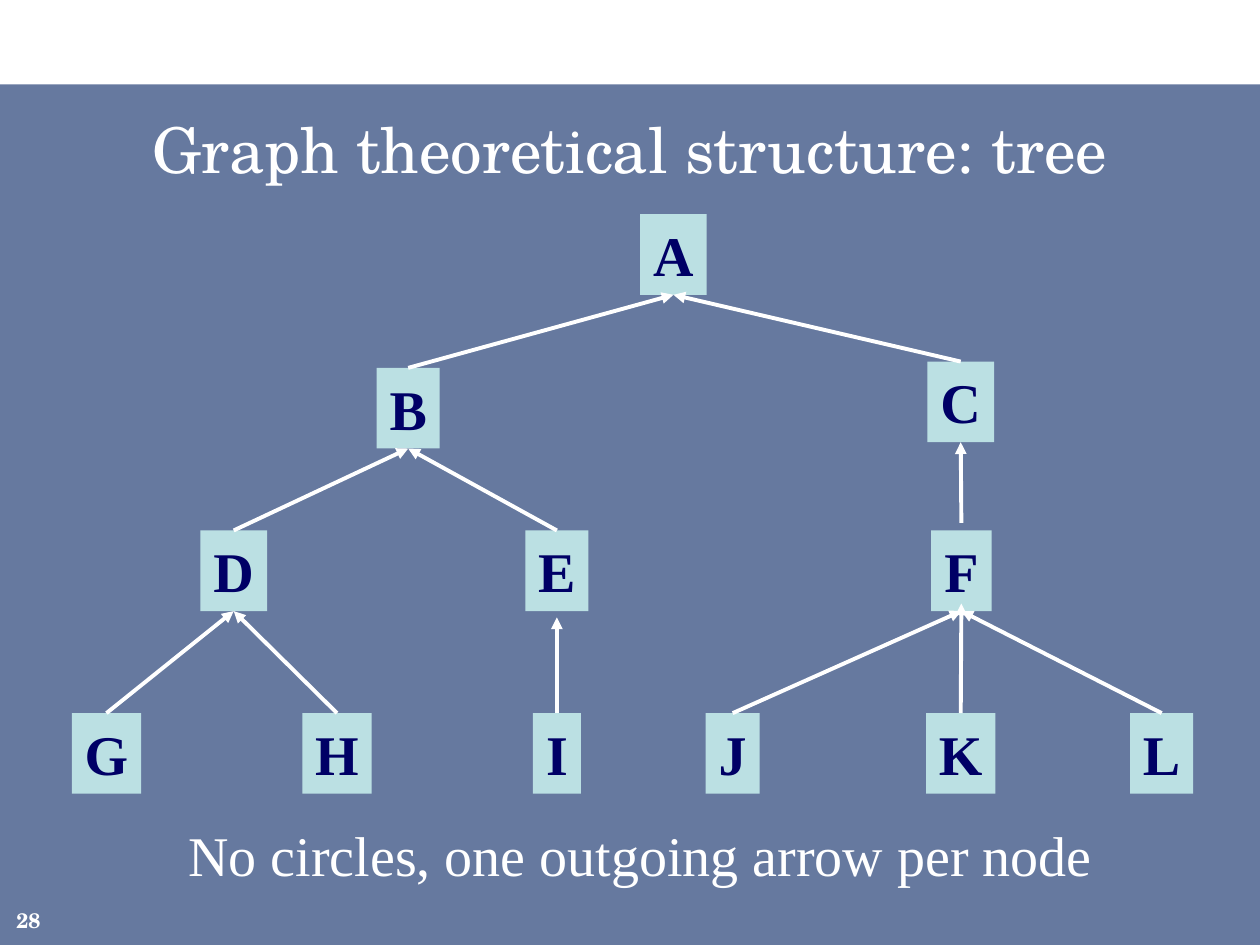
"""Build a slide showing a tree whose nodes point to their parents."""
from lxml.etree import SubElement
from pptx import Presentation
from pptx.dml.color import RGBColor
from pptx.enum.shapes import MSO_CONNECTOR as Connector, MSO_SHAPE as Shape
from pptx.enum.text import MSO_ANCHOR as Anchor, MSO_AUTO_SIZE as AutoSize, PP_ALIGN as Align
from pptx.oxml.ns import qn
from pptx.util import Inches, Pt

WHITE = RGBColor(0xFF, 0xFF, 0xFF)
NAVY = RGBColor(0x00, 0x20, 0x60)
INK = RGBColor(0x00, 0x00, 0x66)
AQUA = RGBColor(0xBB, 0xE0, 0xE3)
SCHOLA, TIMES = "TeX Gyre Schola", "Times New Roman"

NODE_HEIGHT = 0.64
LEAF_TOP, BRANCH_TOP = 5.66, 4.21
NODES = {
    "A": (5.08, 1.7, 0.53), "B": (2.99, 2.92, 0.5), "C": (7.36, 2.87, 0.53),
    "D": (1.59, BRANCH_TOP, 0.53), "E": (4.17, BRANCH_TOP, 0.5),
    "F": (7.39, BRANCH_TOP, 0.48), "G": (0.57, LEAF_TOP, 0.55),
    "H": (2.4, LEAF_TOP, 0.55), "I": (4.23, LEAF_TOP, 0.38),
    "J": (5.6, LEAF_TOP, 0.43), "K": (7.35, LEAF_TOP, 0.55),
    "L": (8.97, LEAF_TOP, 0.5),
}
PARENTS = {"B": "A", "C": "A", "D": "B", "E": "B", "F": "C", "G": "D",
           "H": "D", "I": "E", "J": "F", "K": "F", "L": "F"}
START_GAPS = {"F": 0.06}
END_GAPS = {"I": 0.05, "K": -0.06}


def write(frame, text, size=32, font=TIMES, color=WHITE, bold=False,
          align=Align.CENTER, anchor=Anchor.TOP, grow=True):
    frame.word_wrap = not grow
    frame.auto_size = AutoSize.SHAPE_TO_FIT_TEXT if grow else AutoSize.NONE
    frame.vertical_anchor = anchor
    paragraph = frame.paragraphs[0]
    paragraph.alignment = align
    run = paragraph.add_run()
    run.text = text
    run.font.size, run.font.name, run.font.bold = Pt(size), font, bold
    run.font.color.rgb = color


class TreeSlide:
    def __init__(self, slide):
        self.slide = slide
        self.line_color, self.line_width = WHITE, Pt(2.25)

    def rectangle(self, left, top, width, height, fill, opacity=100):
        box = self.slide.shapes.add_shape(
            Shape.RECTANGLE, Inches(left), Inches(top), Inches(width), Inches(height))
        box.shadow.inherit = False
        box.fill.solid()
        box.fill.fore_color.rgb = fill
        box.line.fill.background()
        if opacity < 100:
            tint = box.fill._xPr.find(qn("a:solidFill"))[0]
            SubElement(tint, qn("a:alpha"), val=str(opacity * 1000))
        return box

    def node(self, letter, left, top, width):
        box = self.rectangle(left, top, width, NODE_HEIGHT, AQUA)
        write(box.text_frame, letter, color=INK, bold=True)
        return box

    def text(self, left, top, width, height, words, **style):
        box = self.slide.shapes.add_textbox(
            Inches(left), Inches(top), Inches(width), Inches(height))
        write(box.text_frame, words, **style)

    def arrow(self, child, parent, start_gap=0, end_gap=0):
        edge = self.slide.shapes.add_connector(
            Connector.STRAIGHT,
            child.left + child.width // 2, child.top - Inches(start_gap),
            parent.left + parent.width // 2,
            parent.top + parent.height + Inches(end_gap))
        if not start_gap:
            edge.begin_connect(child, 0)
        if not end_gap:
            edge.end_connect(parent, 2)
        edge.line.color.rgb, edge.line.width = self.line_color, self.line_width
        SubElement(edge.line._get_or_add_ln(), qn("a:tailEnd"), type="triangle")
        SubElement(edge._element.spPr, qn("a:effectLst"))


def main():
    deck = Presentation()
    deck.slide_width, deck.slide_height = Inches(10), Inches(7.5)
    tree = TreeSlide(deck.slides.add_slide(deck.slide_layouts[6]))

    tree.rectangle(0, 0.67, 10, 6.83, NAVY, opacity=60)
    tree.text(0.25, 0.83, 9.5, 0.83, "Graph theoretical structure: tree",
              size=36, font=SCHOLA, grow=False)
    tree.text(-0.08, 7.1, 0.5, 0.4, "28", size=12, font=SCHOLA, bold=True,
              align=Align.RIGHT, anchor=Anchor.MIDDLE, grow=False)

    nodes = {letter: tree.node(letter, *place) for letter, place in NODES.items()}
    for child, parent in PARENTS.items():
        tree.arrow(nodes[child], nodes[parent],
                   START_GAPS.get(child, 0), END_GAPS.get(child, 0))

    tree.text(1.36, 6.46, 7.45, 0.64, "No circles, one outgoing arrow per node")
    deck.save("out.pptx")


if __name__ == "__main__":
    main()
